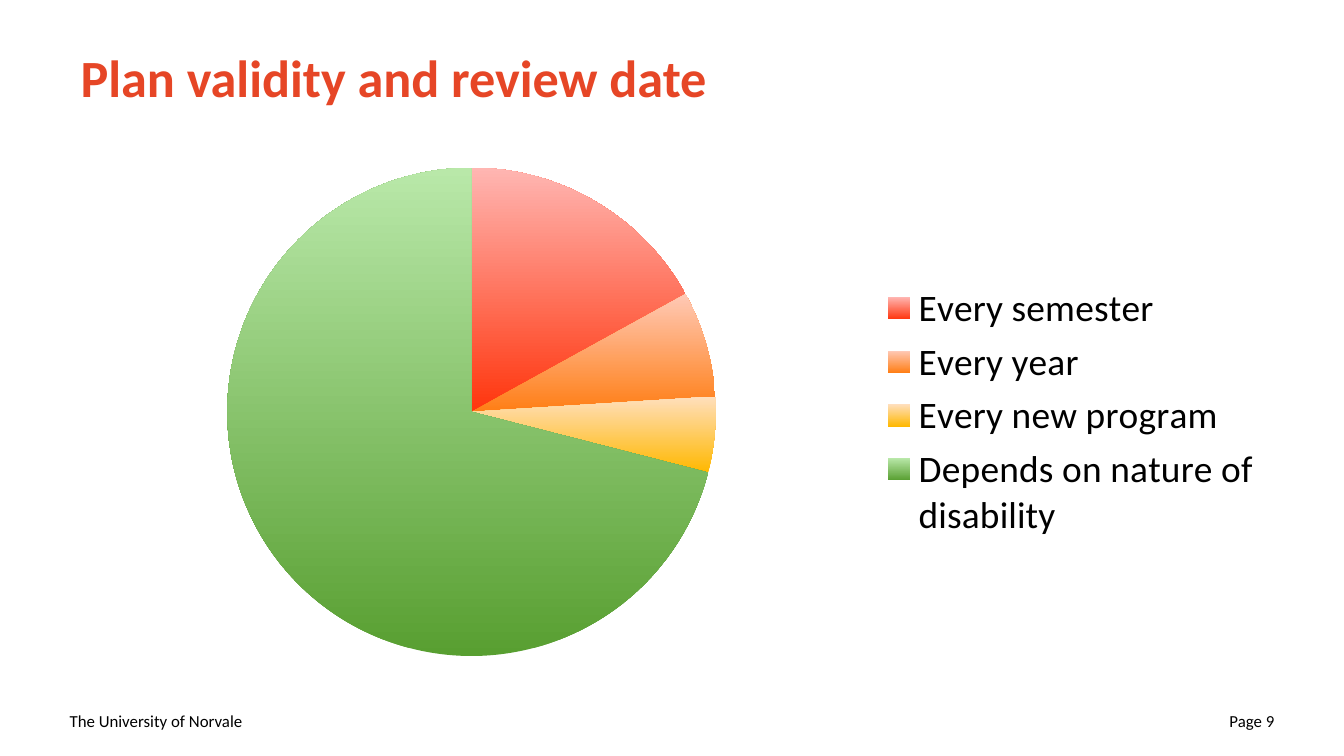
from pptx import Presentation
from pptx.chart import data
from pptx.dml import color
from pptx.enum import chart as charts, text
from pptx.util import Inches, Pt

FONT = "Calibri"
BLACK = "000000"
SLIDE_WIDTH = 10
REVIEW_DATES = [
    ("Every semester", 17, "FF350D", "FFB6B2"),
    ("Every year", 7, "FF7E15", "FFC9B6"),
    ("Every new program", 5, "FFB800", "FFDFBD"),
    ("Depends on nature of disability", 71, "589F31", "B9E8A9"),
]


def rgb(value):
    return color.RGBColor.from_string(value)


def style_font(font, size, value, bold=False):
    font.name = FONT
    font.size = Pt(size)
    font.bold = bold
    font.color.rgb = rgb(value)


def set_text(shape, words, size, value, alignment=text.PP_ALIGN.LEFT, bold=False):
    frame = shape.text_frame
    frame.word_wrap = True
    frame.vertical_anchor = text.MSO_ANCHOR.MIDDLE
    paragraph = frame.paragraphs[0]
    paragraph.text = words
    paragraph.alignment = alignment
    style_font(paragraph.font, size, value, bold)


def set_title(slide, words):
    title = slide.shapes.title
    title.left, title.top = Inches(0.5), Inches(0.1)
    title.width, title.height = Inches(9), Inches(0.94)
    set_text(title, words, 28, "E64626", bold=True)


def add_footer(slide, left, words, alignment):
    box = slide.shapes.add_textbox(Inches(left), Inches(5.21), Inches(2.33), Inches(0.3))
    set_text(box, words, 9, BLACK, alignment)


def fill_gradient(fill, bottom, top):
    fill.gradient()
    fill.gradient_angle = 90
    for stop, value in zip(fill.gradient_stops, (bottom, top)):
        stop.color.rgb = rgb(value)


def add_review_pie(slide):
    chart_data = data.CategoryChartData()
    chart_data.categories = [name for name, *_ in REVIEW_DATES]
    chart_data.add_series("Series 1", [share for _, share, *_ in REVIEW_DATES])
    chart = slide.shapes.add_chart(
        charts.XL_CHART_TYPE.PIE,
        Inches(0.5), Inches(1.11), Inches(9), Inches(3.91), chart_data,
    ).chart
    style_font(chart.font, 10, BLACK)
    chart.has_title = False
    chart.has_legend = True
    chart.legend.position = charts.XL_LEGEND_POSITION.RIGHT
    chart.legend.include_in_layout = False
    style_font(chart.legend.font, 20, BLACK)
    plot = chart.plots[0]
    plot.vary_by_categories = True
    for index, (_, _, bottom, top) in enumerate(REVIEW_DATES):
        point_format = plot.series[0].points[index].format
        fill_gradient(point_format.fill, bottom, top)
        point_format.line.fill.background()


def main():
    presentation = Presentation()
    presentation.slide_width = Inches(SLIDE_WIDTH)
    presentation.slide_height = Inches(SLIDE_WIDTH * 9 / 16)
    slide = presentation.slides.add_slide(presentation.slide_layouts[5])
    add_footer(slide, 0.42, "The University of Norvale", text.PP_ALIGN.LEFT)
    add_footer(slide, 7.25, "Page 9", text.PP_ALIGN.RIGHT)
    set_title(slide, "Plan validity and review date")
    add_review_pie(slide)
    presentation.save("out.pptx")


if __name__ == "__main__":
    main()
